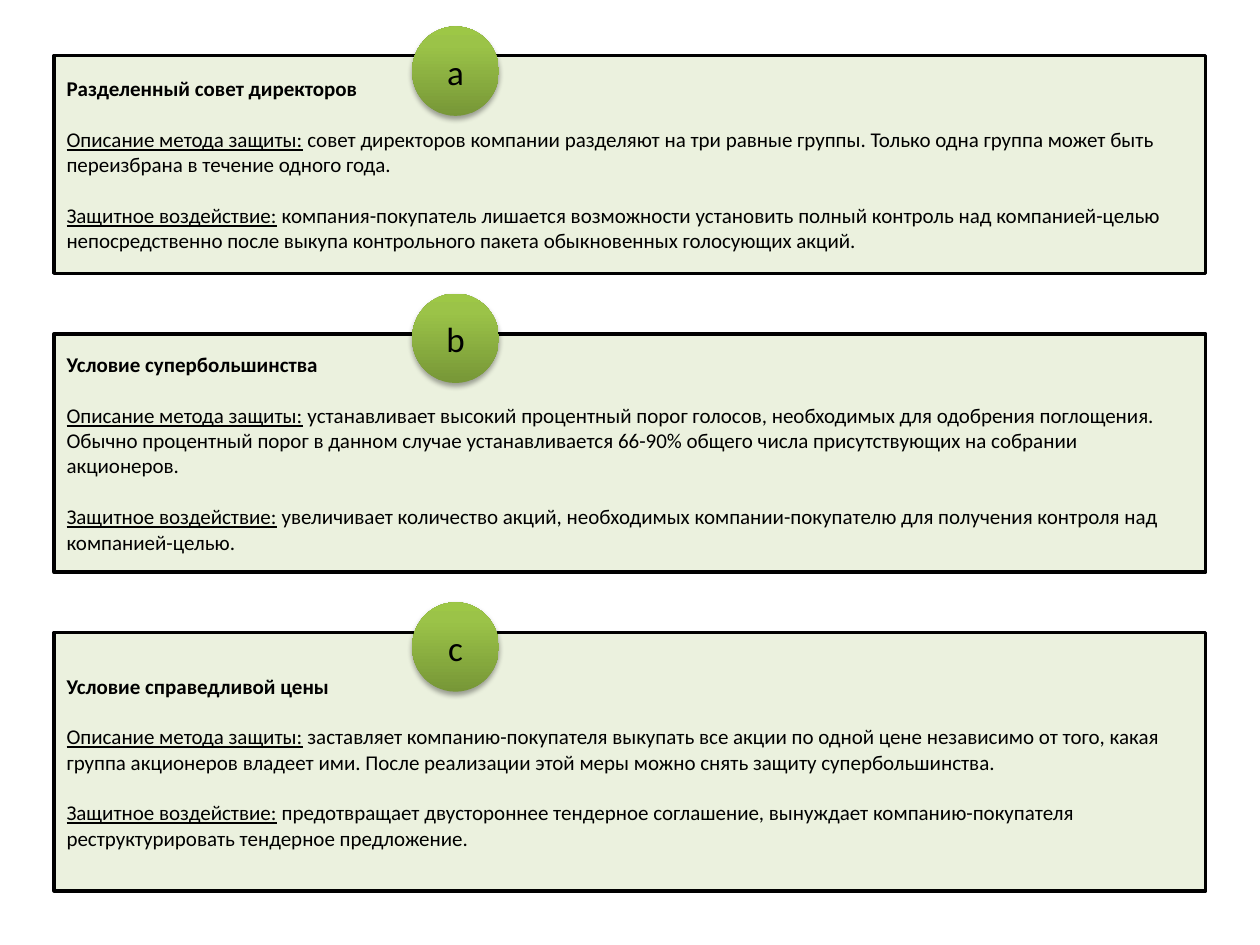
from lxml.etree import SubElement
from pptx import Presentation
from pptx.dml.color import RGBColor
from pptx.enum.shapes import MSO_SHAPE
from pptx.enum.text import MSO_ANCHOR, PP_ALIGN
from pptx.oxml import parse_xml
from pptx.oxml.ns import nsdecls, qn
from pptx.util import Inches, Pt

# Content: letter, title, description, effect
LABELS = ("Описание метода защиты:", "Защитное воздействие:")
METHODS = [
    ("a", "Разделенный совет директоров",
     "совет директоров компании разделяют на три равные группы. Только одна группа "
     "может быть переизбрана в течение одного года.",
     "компания-покупатель лишается возможности установить полный контроль над "
     "компанией-целью непосредственно после выкупа контрольного пакета обыкновенных "
     "голосующих акций."),
    ("b", "Условие супербольшинства",
     "устанавливает высокий процентный порог голосов, необходимых для одобрения "
     "поглощения. Обычно процентный порог в данном случае устанавливается 66-90% "
     "общего числа присутствующих на собрании акционеров.",
     "увеличивает количество акций, необходимых компании-покупателю для получения "
     "контроля над компанией-целью."),
    ("c", "Условие справедливой цены",
     "заставляет компанию-покупателя выкупать все акции по одной цене независимо от "
     "того, какая группа акционеров владеет ими. После реализации этой меры можно "
     "снять защиту супербольшинства.",
     "предотвращает двустороннее тендерное соглашение, вынуждает "
     "компанию-покупателя реструктурировать тендерное предложение."),
]

THEME = {
    "font": "Calibri", "text": "000000", "panel": "EBF1DE", "line": "000000",
    "badge": [(0, "779737"), (80, "9BC348"), (100, "9DC746")],
    "body": 12, "letter": 20, "line_width": 2, "paragraph_gap": 14.65,
}

# Layout in inches: each panel is one step taller than the one above it
SLIDE_W, SLIDE_H = 10, 7.5
MARGIN, FIRST_TOP, GAP = 0.43, 0.44, 0.48
FIRST_H, STEP_H = 1.73, 0.16
BADGE_X, BADGE_W, BADGE_H = 3.27, 0.69, 0.71
BADGE_RISE = (0.23, 0.32, 0.24)


def add_run(p, text, size, bold=False, underline=False):
    r = p.add_run()
    r.text = text
    f = r.font
    f.name, f.size, f.bold, f.underline = THEME["font"], Pt(size), bold, underline
    f.color.rgb = RGBColor.from_string(THEME["text"])


def add_block(slide, kind, left, top, width, height, align):
    s = slide.shapes.add_shape(kind, *map(Inches, (left, top, width, height)))
    s.shadow.inherit = False
    tf = s.text_frame
    tf.word_wrap = True
    tf.vertical_anchor = MSO_ANCHOR.MIDDLE
    tf.paragraphs[0].alignment = align
    return s


def add_panel(slide, top, height, title, details):
    s = add_block(slide, MSO_SHAPE.RECTANGLE, MARGIN, top,
                  SLIDE_W - 2 * MARGIN, height, PP_ALIGN.LEFT)
    s.fill.solid()
    s.fill.fore_color.rgb = RGBColor.from_string(THEME["panel"])
    s.line.color.rgb = RGBColor.from_string(THEME["line"])
    s.line.width = Pt(THEME["line_width"])
    tf = s.text_frame
    add_run(tf.paragraphs[0], title, THEME["body"], bold=True)
    for label, detail in zip(LABELS, details):
        p = tf.add_paragraph()
        p.alignment = PP_ALIGN.LEFT
        p.space_before = Pt(THEME["paragraph_gap"])
        add_run(p, label, THEME["body"], underline=True)
        add_run(p, " " + detail, THEME["body"])


def add_badge(slide, top, letter):
    s = add_block(slide, MSO_SHAPE.OVAL, BADGE_X, top, BADGE_W, BADGE_H,
                  PP_ALIGN.CENTER)
    s.line.fill.background()
    add_run(s.text_frame.paragraphs[0], letter, THEME["letter"])
    # Three-stop gradient running upwards
    stops = "".join(f'<a:gs pos="{pos * 1000}"><a:srgbClr val="{color}"/></a:gs>'
                    for pos, color in THEME["badge"])
    sp_pr = s.element.spPr
    sp_pr.find(qn("a:prstGeom")).addnext(parse_xml(
        f'<a:gradFill {nsdecls("a")} rotWithShape="1"><a:gsLst>{stops}</a:gsLst>'
        '<a:lin ang="16200000" scaled="0"/></a:gradFill>'))
    # Soft shadow below
    shadow = SubElement(sp_pr.find(qn("a:effectLst")), qn("a:outerShdw"),
                        blurRad=str(Pt(3.1)), dist=str(Pt(1.8)),
                        dir="5400000", rotWithShape="0")
    color = SubElement(shadow, qn("a:srgbClr"), val=THEME["line"])
    SubElement(color, qn("a:alpha"), val="35000")


prs = Presentation()
prs.slide_width, prs.slide_height = Inches(SLIDE_W), Inches(SLIDE_H)
slide = prs.slides.add_slide(prs.slide_layouts[6])

top = FIRST_TOP
for i, (letter, title, *details) in enumerate(METHODS):
    height = FIRST_H + i * STEP_H
    add_panel(slide, top, height, title, details)
    add_badge(slide, top - BADGE_RISE[i], letter)
    top += height + GAP

prs.save("out.pptx")
